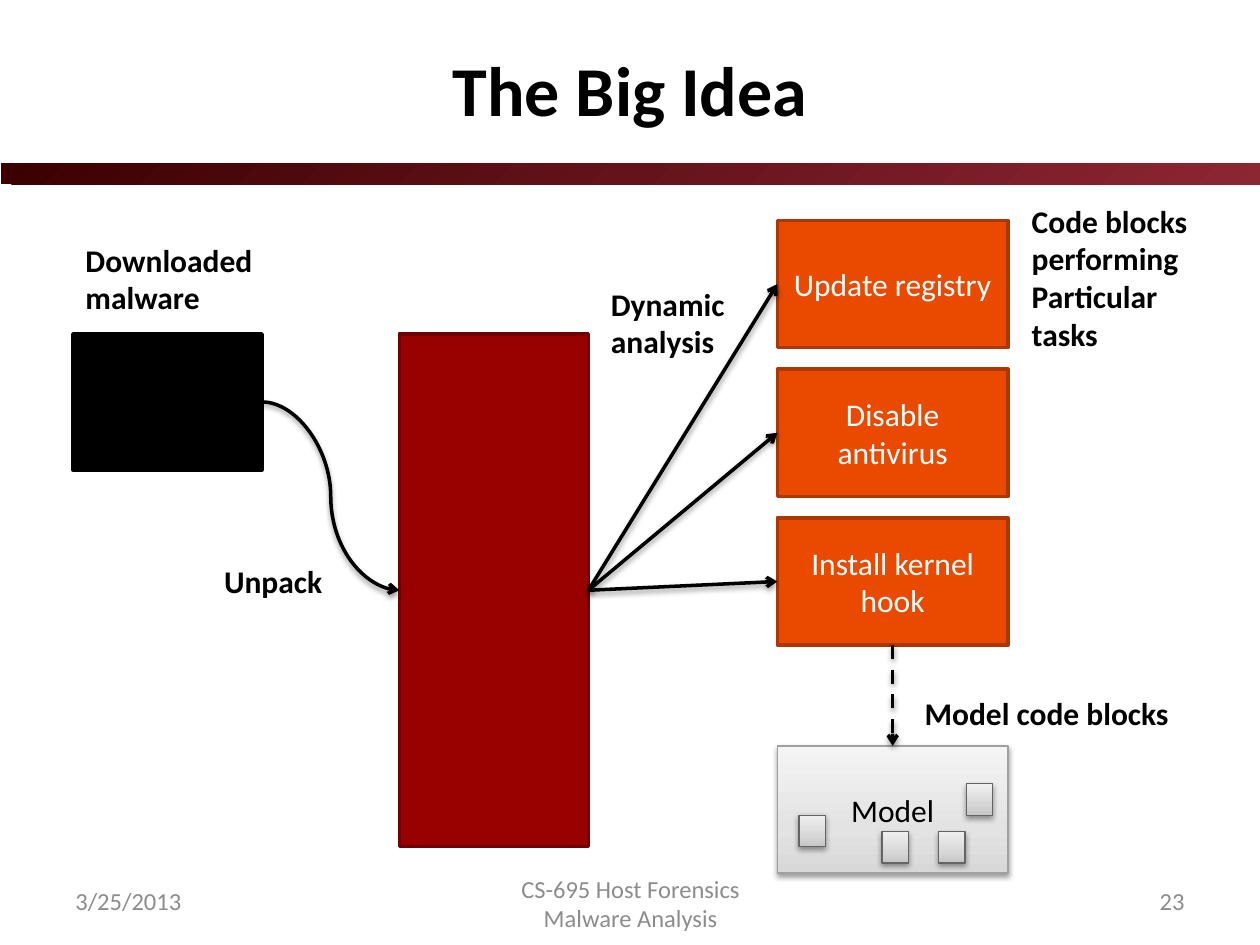
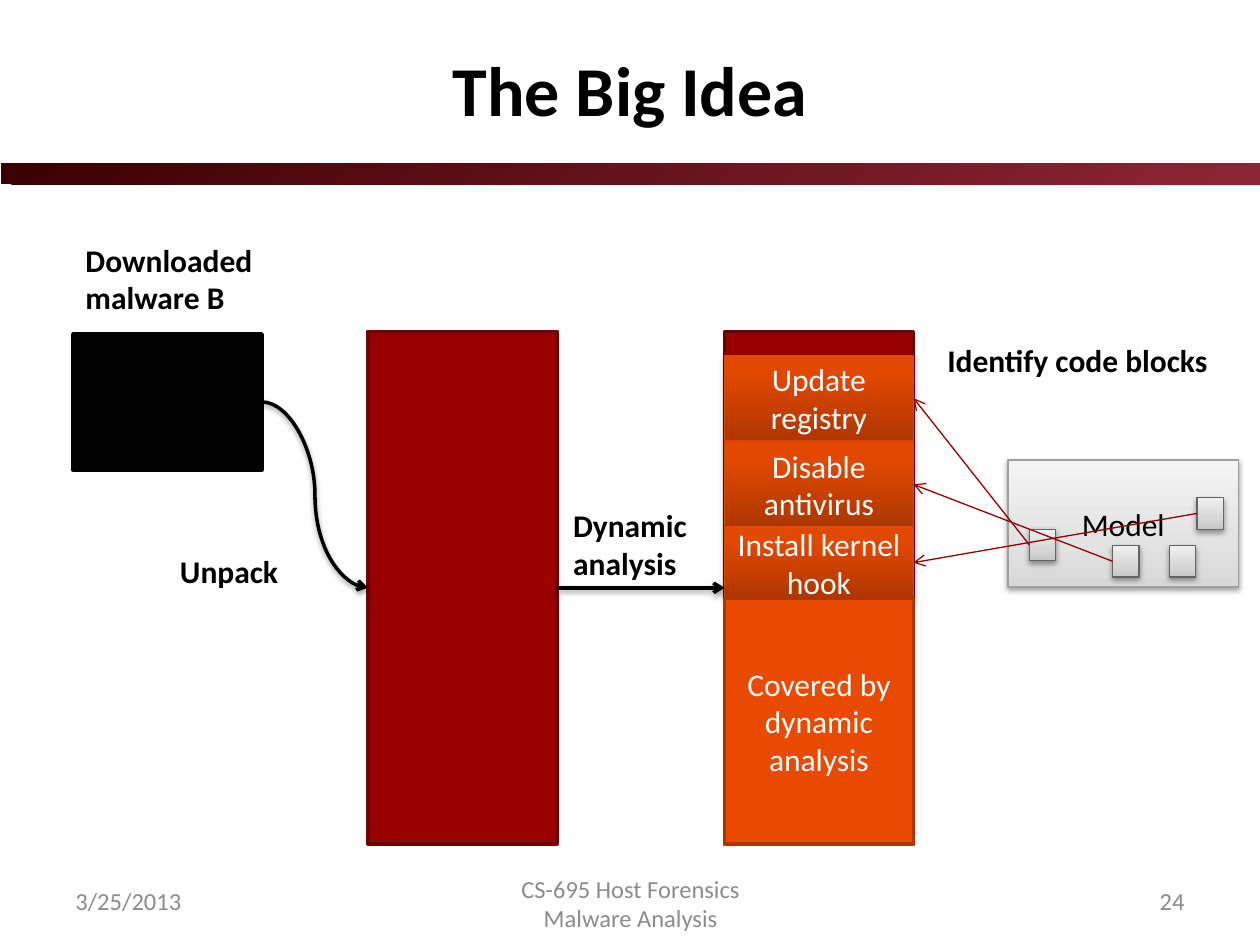
from pptx import Presentation
from pptx.dml.color import RGBColor
from pptx.enum import dml, shapes, text
from pptx.oxml import parse_xml
from pptx.oxml.ns import nsdecls, qn
from pptx.util import Inches, Pt

BLACK = RGBColor(0x00, 0x00, 0x00)
WHITE = RGBColor(0xFF, 0xFF, 0xFF)
GRAY = RGBColor(0x8C, 0x8C, 0x8C)
RED = RGBColor(0x99, 0x00, 0x00)
MAROON = RGBColor(0x71, 0x00, 0x00)
ORANGE = RGBColor(0xE9, 0x4A, 0x00)
RUST = RGBColor(0xAC, 0x37, 0x00)
FLAME = RGBColor(0xE4, 0x48, 0x00)
WINE = RGBColor(0x96, 0x00, 0x00)
SILVER = RGBColor(0xA0, 0xA0, 0xA0)
STEEL = RGBColor(0x64, 0x64, 0x64)

# Gradients: stops as (percent, colour)
BAND = [(0, "3C0000"), (100, "8C2633")]
PALE = [(0, "D8D8D8"), (35, "E3E3E3"), (100, "F4F4F4")]
CHIP = [(0, "C6C6C6"), (35, "D7D7D7"), (100, "F0F0F0")]
GLOW = [(0, "AE3700"), (80, "E24800"), (100, "E34800")]

SHADOW = (f'<a:effectLst {nsdecls("a")}><a:outerShdw blurRad="40000" dist="20000" '
          'dir="5400000" rotWithShape="0"><a:srgbClr val="000000">'
          '<a:alpha val="38000"/></a:srgbClr></a:outerShdw></a:effectLst>')
FLAT = f'<a:effectLst {nsdecls("a")}/>'

LEFT, MID, RIGHT = text.PP_ALIGN.LEFT, text.PP_ALIGN.CENTER, text.PP_ALIGN.RIGHT


def put(page, at, words="", fill=None, line=None, width=2, ink=WHITE,
        size=18, bold=False, align=MID, wrap=True, angle=90):
    """Add a filled rectangle, or a text box when there is no fill.

    A list as fill is a gradient; a gradient box with a line casts a shadow.
    """
    place = [Inches(v) for v in at]
    if fill is None:
        box = page.shapes.add_textbox(*place)
    else:
        box = page.shapes.add_shape(shapes.MSO_SHAPE.RECTANGLE, *place)
        props = box.element.spPr
        if isinstance(fill, list):
            box.fill.gradient()
            box.fill.gradient_angle = angle
            stops = props.find(".//" + qn("a:gsLst"))
            stops.clear()
            for pos, tint in fill:
                stops.append(parse_xml(
                    f'<a:gs {nsdecls("a")} pos="{pos * 1000}"><a:srgbClr val="{tint}"/></a:gs>'))
        else:
            box.fill.solid()
            box.fill.fore_color.rgb = fill
        if line is None:
            box.line.fill.background()
        else:
            box.line.color.rgb = line
            box.line.width = Pt(width)
        props.append(parse_xml(SHADOW if isinstance(fill, list) and line else FLAT))
    if words:
        frame = box.text_frame
        frame.word_wrap = wrap
        frame.vertical_anchor = text.MSO_ANCHOR.MIDDLE if wrap else text.MSO_ANCHOR.TOP
        if not wrap:
            frame.auto_size = text.MSO_AUTO_SIZE.SHAPE_TO_FIT_TEXT
        for i, row in enumerate(words.split("\n")):
            para = frame.add_paragraph() if i else frame.paragraphs[0]
            para.alignment = align
            run = para.add_run()
            run.text = row
            font = run.font
            font.name, font.size, font.bold = "Calibri", Pt(size), bold
            font.color.rgb = ink
    return box


def link(page, start, out, end, into, kind=shapes.MSO_CONNECTOR.STRAIGHT,
         color=BLACK, width=2, dash=False, shade=True):
    """Draw an arrow from side `out` of start to side `into` of end."""
    wire = page.shapes.add_connector(kind, 0, 0, 0, 0)
    wire.begin_connect(start, out)
    wire.end_connect(end, into)
    wire.line.color.rgb = color
    wire.line.width = Pt(width)
    if dash:
        wire.line.dash_style = dml.MSO_LINE.DASH
    props = wire.element.spPr
    props.find(qn("a:ln")).append(parse_xml(f'<a:tailEnd {nsdecls("a")} type="arrow"/>'))
    props.append(parse_xml(SHADOW if shade else FLAT))


deck = Presentation()
deck.slide_width, deck.slide_height = Inches(10), Inches(7.5)
note = dict(ink=BLACK, bold=True, align=LEFT, wrap=False)
foot = dict(ink=GRAY, size=14)

# Shared frame and the parts both diagrams have, at each slide's own places
plans = [
    (23, "Downloaded\nmalware", (3.17, 2.65), (1.68, 4.41), (4.75, 2.21), (6.17, 5.92)),
    (24, "Downloaded\nmalware B", (2.92, 2.63), (1.33, 4.33), (4.45, 3.97), (8, 3.65)),
]
parts = []
for num, name, core, unpack, dynamic, spot in plans:
    page = deck.slides.add_slide(deck.slide_layouts[5])
    band = put(page, (4.92, -3.62, 0.17, 10), fill=BAND, angle=45)
    band.rotation = 90

    title = page.shapes.title
    title.left, title.top = Inches(0.5), Inches(0.15)
    title.width, title.height = Inches(9), Inches(1.1)
    title.text_frame.vertical_anchor = text.MSO_ANCHOR.MIDDLE
    para = title.text_frame.paragraphs[0]
    para.alignment = MID
    run = para.add_run()
    run.text = "The Big Idea"
    run.font.name, run.font.size, run.font.bold = "Calibri", Pt(40), True
    run.font.color.rgb = BLACK

    put(page, (0.5, 6.95, 1.83, 0.4), "3/25/2013", align=LEFT, **foot)
    put(page, (3.76, 6.97, 2.49, 0.4), "CS-695 Host Forensics Malware Analysis", **foot)
    put(page, (7.67, 6.95, 1.83, 0.4), str(num), align=RIGHT, **foot)

    packed = put(page, (0.58, 2.65, 1.5, 1.08), fill=BLACK, line=BLACK)
    put(page, (0.58, 1.86, 1.59, 0.71), name, **note)
    plain = put(page, (*core, 1.5, 4.07), fill=RED, line=MAROON)
    link(page, packed, 3, plain, 1, kind=shapes.MSO_CONNECTOR.CURVE)
    put(page, (*unpack, 0.99, 0.4), "Unpack", **note)
    put(page, (*dynamic, 1.11, 0.71), "Dynamic\nanalysis", **note)

    x, y = spot
    model = put(page, (x, y, 1.83, 1.01), "Model", PALE, SILVER, 0.75, ink=BLACK)
    chips = [put(page, (x + dx, y + dy, 0.21, 0.25), fill=CHIP, line=STEEL, width=0.75)
             for dx, dy in [(0.17, 0.55), (0.83, 0.68), (1.5, 0.3), (1.28, 0.68)]]
    parts.append((page, plain, model, chips))

tasks = ["Update registry", "Disable antivirus", "Install kernel hook"]

# Slide 1: tasks found by dynamic analysis are turned into a model
page, plain, model, chips = parts[0]
for i, task in enumerate(tasks):
    block = put(page, (6.17, 1.75 + 1.18 * i, 1.83, 1.01), task, ORANGE, RUST)
    link(page, plain, 3, block, 1)
link(page, block, 2, model, 0, dash=True)
put(page, (8.09, 1.55, 1.44, 1.31), "Code blocks\nperforming\nParticular\ntasks", **note)
put(page, (7.24, 5.46, 2.15, 0.4), "Model code blocks", **note)

# Slide 2: the model finds the same tasks in other malware
page, plain, model, chips = parts[1]
whole = put(page, (5.75, 2.63, 1.5, 4.07), fill=RED, line=MAROON)
tops = [(2.82, 0.68), (3.51, 0.67), (4.18, 0.57)]
blocks = [put(page, (5.75, top, 1.5, tall), task, GLOW, FLAME, 0.75)
          for task, (top, tall) in zip(tasks, tops)]
for chip, block in zip(chips, blocks):
    link(page, chip, 1, block, 3, color=WINE, width=0.75, shade=False)
put(page, (7.42, 2.66, 2.44, 0.4), "Identify code blocks", **note)
put(page, (5.75, 4.75, 1.5, 1.95), "Covered by dynamic analysis", ORANGE, RUST)
link(page, plain, 3, whole, 1)

deck.save("out.pptx")
